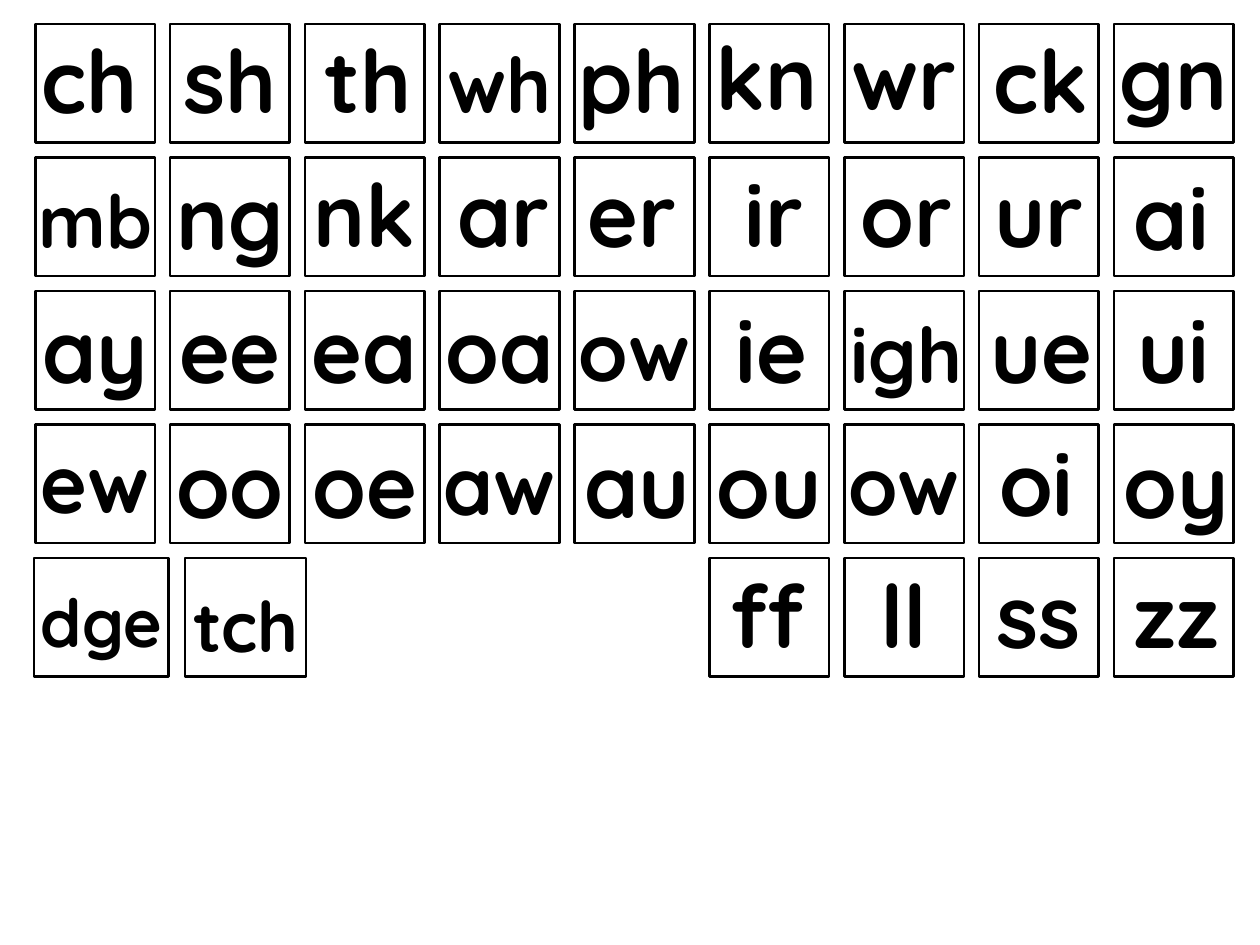
from pptx import Presentation
from pptx import util as u
from pptx.dml import color
from pptx.enum import shapes, text

FONT = "Quicksand"
LEFT, TOP = 0.28, 0.19
COL, ROW = 1.07, 1.06
TILE_W, TILE_H = 0.95, 0.94
ROWS = [
    (0, -0.04, "ch sh th wh ph kn wr ck gn"),
    (0, -0.03, "mb ng nk ar er ir or ur ai"),
    (0, -0.01, "ay ee ea oa ow ie igh ue ui"),
    (0, 0, "ew oo oe aw au ou ow oi oy"),
    (5, -0.03, "ff ll ss zz"),
]
WIDE_TILES = [("dge", 0.27, 1.07, 0.03), ("tch", 1.47, 0.96, 0.06)]
SIZES = {"wh": 44, "mb": 42, "ow": 46, "igh": 44, "ew": 46, "aw": 46,
         "dge": 38, "tch": 40}
SHIFT_X = {"ch": -0.04, "th": 0.03, "ph": -0.02, "kn": -0.02, "ck": 0.02,
           "ar": 0.03, "er": -0.02, "ir": 0.04, "or": 0.02, "ai": -0.02,
           "ie": 0.02, "igh": 0.02, "ue": 0.02, "au": 0.02, "oi": -0.02,
           "oy": 0.02, "ff": -0.02, "zz": 0.02}
SHIFT_Y = {"wh": 0, "kn": -0.06, "wr": -0.06, "gn": -0.06, "mb": 0.02,
           "ng": -0.01, "ai": -0.01, "igh": 0.02, "ew": -0.02, "oi": -0.02}


def rgb(value):
    return color.RGBColor.from_string(value)


def box(x, y, w, h):
    return [u.Inches(v) for v in (x, y, w, h)]


def add_square(group, x, y, w):
    sp = group.shapes.add_shape(shapes.MSO_SHAPE.RECTANGLE, *box(x, y, w, TILE_H))
    sp.shadow.inherit = False
    sp.fill.solid()
    sp.fill.fore_color.rgb = rgb("FFFFFF")
    sp.line.color.rgb = rgb("000000")
    sp.line.width = u.Pt(1.5)


def add_letters(group, letters, cx, cy):
    size = SIZES.get(letters, 50)
    w = 1.42 if len(letters) == 3 else 1.22 if letters in SIZES else 1.13
    h = 1.2 * size / 72 + 0.1
    sp = group.shapes.add_textbox(*box(cx - w / 2, cy - h / 2, w, h))
    tf = sp.text_frame
    tf.word_wrap = True
    tf.auto_size = text.MSO_AUTO_SIZE.SHAPE_TO_FIT_TEXT
    p = tf.paragraphs[0]
    p.text = letters
    p.alignment = text.PP_ALIGN.CENTER
    p.font.name = FONT
    p.font.size = u.Pt(size)
    p.font.bold = True
    p.font.color.rgb = rgb("000000")


def add_tile(s, letters, x, y, w, dy):
    group = s.shapes.add_group_shape()
    add_square(group, x, y, w)
    cx = x + w / 2 + SHIFT_X.get(letters, 0)
    cy = y + TILE_H / 2 + SHIFT_Y.get(letters, dy)
    add_letters(group, letters, cx, cy)


def main():
    prs = Presentation()
    prs.slide_width, prs.slide_height = u.Inches(10), u.Inches(7.5)
    s = prs.slides.add_slide(prs.slide_layouts[6])
    for row, (first, dy, words) in enumerate(ROWS):
        for col, letters in enumerate(words.split(), first):
            add_tile(s, letters, LEFT + col * COL, TOP + row * ROW, TILE_W, dy)
    for letters, x, w, dy in WIDE_TILES:
        add_tile(s, letters, x, TOP + 4 * ROW, w, dy)
    prs.save("out.pptx")


if __name__ == "__main__":
    main()
